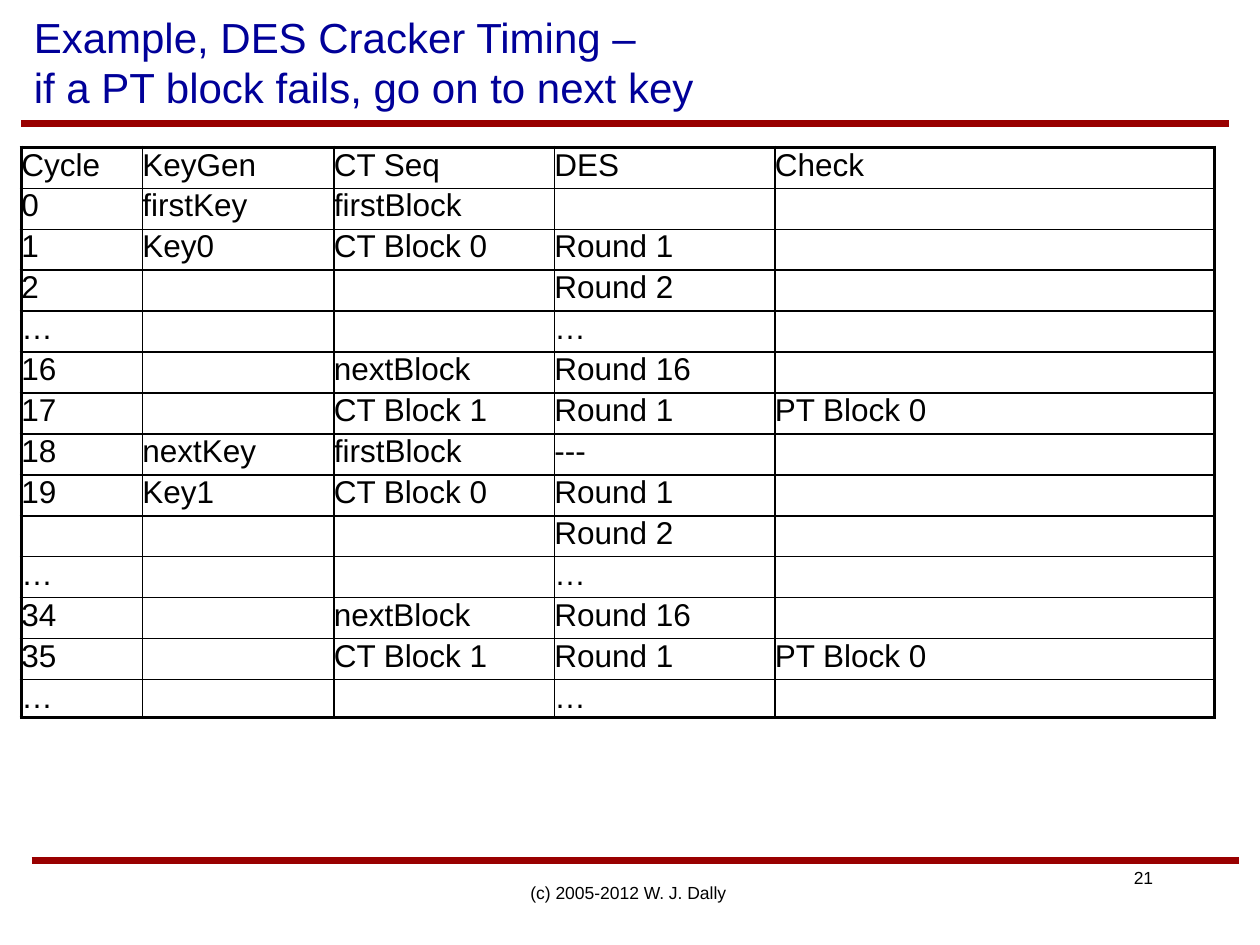
from lxml import etree
from pptx import Presentation
from pptx.dml.color import RGBColor
from pptx.enum.shapes import MSO_CONNECTOR
from pptx.enum.text import MSO_ANCHOR, PP_ALIGN
from pptx.oxml.ns import qn
from pptx.util import Inches, Pt

STRAIGHT = MSO_CONNECTOR.STRAIGHT
LEFT, CENTER, RIGHT = PP_ALIGN.LEFT, PP_ALIGN.CENTER, PP_ALIGN.RIGHT
TOP, MIDDLE = MSO_ANCHOR.TOP, MSO_ANCHOR.MIDDLE

BLACK, NAVY, RED = "000000", "000099", "990000"
THIN, THICK = 1, 2.25

TITLE = "Example, DES Cracker Timing – \vif a PT block fails, go on to next key"
FOOTER = "(c) 2005-2012 W. J. Dally "
PAGE_NUMBER = "21"
RULES = [(0.17, 0.98), (0.25, 6.83)]
RULE_LENGTH = 9.58

COLUMN_WIDTHS = [0.96, 1.52, 1.75, 1.75, 3.49]
ROW_HEIGHT, LAST_ROW_HEIGHT = 0.325, 0.3
TIMING = [
    ("Cycle", "KeyGen", "CT Seq", "DES", "Check"),
    ("0", "firstKey", "firstBlock", "", ""),
    ("1", "Key0", "CT Block 0", "Round 1", ""),
    ("2", "", "", "Round 2", ""),
    ("…", "", "", "…", ""),
    ("16", "", "nextBlock", "Round 16", ""),
    ("17", "", "CT Block 1", "Round 1", "PT Block 0"),
    ("18", "nextKey", "firstBlock", "---", ""),
    ("19", "Key1", "CT Block 0", "Round 1", ""),
    ("", "", "", "Round 2", ""),
    ("…", "", "", "…", ""),
    ("34", "", "nextBlock", "Round 16", ""),
    ("35", "", "CT Block 1", "Round 1", "PT Block 0"),
    ("…", "", "", "…", ""),
]


def color(value):
    return RGBColor.from_string(value)


def write(frame, text, size=18, fill=BLACK, align=LEFT):
    para = frame.paragraphs[0]
    para.text = text
    para.alignment = align
    for span in para.runs:
        span.font.name = "Arial"
        span.font.size = Pt(size)
        span.font.color.rgb = color(fill)


def add_text(page, text, left, top, width, height, anchor=MIDDLE, wrap=True, **style):
    box = page.shapes.add_textbox(*map(Inches, (left, top, width, height)))
    frame = box.text_frame
    frame.word_wrap = wrap
    frame.vertical_anchor = anchor
    write(frame, text, **style)


def add_rule(page, left, top):
    ends = map(Inches, (left, top, left + RULE_LENGTH, top))
    rule = page.shapes.add_connector(STRAIGHT, *ends)
    rule.line.color.rgb = color(RED)
    rule.line.width = Pt(4)
    etree.SubElement(rule.element.spPr, qn("a:effectLst"))


def set_borders(cell, outer_sides):
    """Draw all four borders, thick on the sides along the table's edge."""
    properties = cell._tc.get_or_add_tcPr()
    for side in "LRTB":
        width = THICK if side in outer_sides else THIN
        line = etree.SubElement(properties, qn("a:ln" + side), w=str(Pt(width)))
        fill = etree.SubElement(line, qn("a:solidFill"))
        etree.SubElement(fill, qn("a:srgbClr"), val=BLACK)


def add_timing_table(page, left, top):
    row_count, column_count = len(TIMING), len(COLUMN_WIDTHS)
    heights = [ROW_HEIGHT] * (row_count - 1) + [LAST_ROW_HEIGHT]
    table = page.shapes.add_table(
        row_count, column_count, Inches(left), Inches(top),
        Inches(sum(COLUMN_WIDTHS)), Inches(sum(heights))).table
    table.first_row = table.horz_banding = False
    for column, width in zip(table.columns, COLUMN_WIDTHS):
        column.width = Inches(width)
    for r, (row, height) in enumerate(zip(table.rows, heights)):
        row.height = Inches(height)
        for c, cell in enumerate(row.cells):
            cell.margin_left = cell.margin_right = 0
            cell.margin_top = cell.margin_bottom = 0
            on_edge = {"L": c == 0, "R": c == column_count - 1,
                       "T": r == 0, "B": r == row_count - 1}
            set_borders(cell, [side for side, outer in on_edge.items() if outer])
            cell.fill.background()
            write(cell.text_frame, TIMING[r][c])


def main():
    deck = Presentation()
    deck.slide_width, deck.slide_height = Inches(10), Inches(7.5)
    page = deck.slides.add_slide(deck.slide_layouts[6])
    for left, top in RULES:
        add_rule(page, left, top)
    add_text(page, PAGE_NUMBER, 7.5, 6.83, 1.75, 0.27, anchor=TOP, size=10, align=RIGHT)
    add_text(page, FOOTER, 3.42, 6.83, 3.17, 0.5, wrap=False, size=10, align=CENTER)
    add_text(page, TITLE, 0.17, 0, 9.83, 0.98, size=24, fill=NAVY)
    add_timing_table(page, 0.17, 1.17)
    deck.save("out.pptx")


if __name__ == "__main__":
    main()
